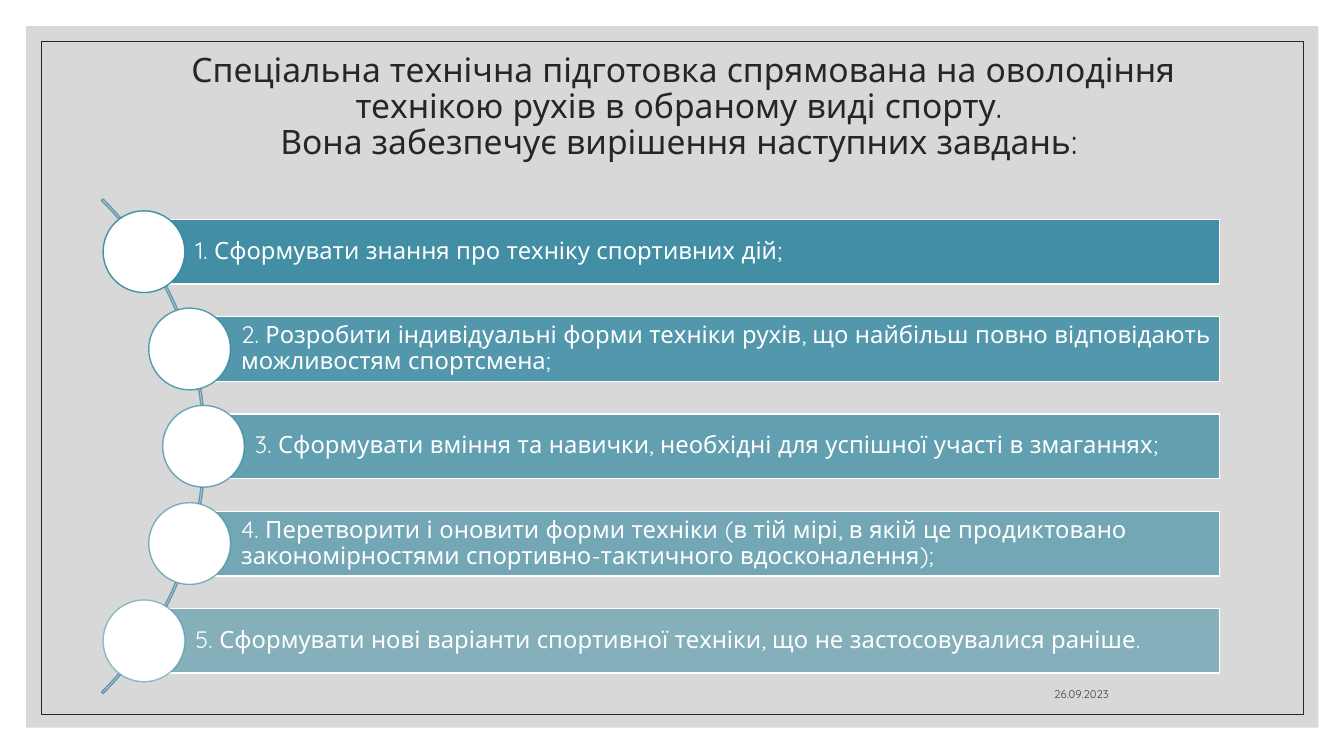
from dataclasses import dataclass
from math import sqrt

from lxml.etree import SubElement
from pptx import Presentation
from pptx.dml.color import RGBColor
from pptx.enum.shapes import MSO_SHAPE as Preset
from pptx.enum.text import MSO_ANCHOR as Anchor, PP_ALIGN as Align
from pptx.oxml.ns import qn
from pptx.util import Pt

COLORS = {
    "white": "FFFFFF",
    "panel": "BFBFBF",
    "ink": "262626",
    "date": "3F3F3F",
    "teal": "3187A0",
    "arc": "6499AC",
}
FONT = "Quicksand"

ARC_CENTER_X, ARC_CENTER_Y, ARC_RADIUS = -103, 318.8, 249.8
CIRCLE_PATH_RADIUS = 248.4
TASK_PITCH = 69.5
BAR_RIGHT, BAR_HEIGHT = 871.2, 46.2
CIRCLE_SIZE = 58.4


@dataclass(frozen=True)
class Box:
    left: float
    top: float
    width: float
    height: float

    def lengths(self) -> tuple:
        return tuple(Pt(value) for value in (self.left, self.top, self.width, self.height))


@dataclass(frozen=True)
class Paint:
    color: str
    opacity: int = 100


@dataclass(frozen=True)
class TextStyle:
    size: float
    color: str
    align: Align = Align.LEFT
    anchor: Anchor = Anchor.MIDDLE
    spacing: float = 0.9
    margins: tuple = (7.2, 3.6, 7.2, 3.6)


@dataclass(frozen=True)
class Task:
    text: str
    opacity: int


TASKS = [
    Task("1. Сформувати знання про техніку спортивних дій;", 90),
    Task("2. Розробити індивідуальні форми техніки рухів, що найбільш повно "
         "відповідають можливостям спортсмена;", 80),
    Task("3. Сформувати вміння та навички, необхідні для успішної участі в змаганнях;", 70),
    Task("4. Перетворити і оновити форми техніки (в тій мірі, в якій це продиктовано "
         "закономірностями спортивно-тактичного вдосконалення);", 60),
    Task("5. Сформувати нові варіанти спортивної техніки, що не застосовувалися раніше.", 50),
]
TITLE = ("Спеціальна технічна підготовка спрямована на оволодіння технікою рухів "
         "в обраному виді спорту. \vВона забезпечує вирішення наступних завдань: ")

TITLE_STYLE = TextStyle(24, "ink", Align.CENTER, Anchor.TOP, margins=(7.2, 2, 7.2, 3.6))
TASK_STYLE = TextStyle(17, "white", margins=(36.7, 3.6, 3.6, 3.6))
DATE_STYLE = TextStyle(8, "date", Align.RIGHT, Anchor.BOTTOM, spacing=1.0)


def apply_paint(fill, paint: Paint) -> None:
    fill.solid()
    fill.fore_color.rgb = RGBColor.from_string(COLORS[paint.color])


def add_opacity(shape, parent: str, paint: Paint) -> None:
    if paint.opacity < 100:
        color = shape.element.spPr.find(f"{parent}/{qn('a:solidFill')}/{qn('a:srgbClr')}")
        SubElement(color, qn("a:alpha")).set("val", str(paint.opacity * 1000))


def add_preset(slide, preset: Preset, box: Box, fill: Paint | None = None,
               line: Paint | None = None, line_width: float = 1):
    shape = slide.shapes.add_shape(preset, *box.lengths())
    shape.shadow.inherit = False
    if fill:
        apply_paint(shape.fill, fill)
        add_opacity(shape, ".", fill)
    else:
        shape.fill.background()
    if line:
        apply_paint(shape.line.fill, line)
        shape.line.width = Pt(line_width)
        add_opacity(shape, qn("a:ln"), line)
    else:
        shape.line.fill.background()
    return shape


def write_text(shape, text: str, style: TextStyle) -> None:
    frame = shape.text_frame
    left, top, right, bottom = (Pt(margin) for margin in style.margins)
    frame_format = {
        "word_wrap": True, "vertical_anchor": style.anchor,
        "margin_left": left, "margin_top": top,
        "margin_right": right, "margin_bottom": bottom,
    }
    for name, value in frame_format.items():
        setattr(frame, name, value)
    paragraph = frame.paragraphs[0]
    paragraph.text = text
    paragraph.alignment = style.align
    paragraph.line_spacing = style.spacing
    for run in paragraph.runs:
        for name, value in {"name": FONT, "size": Pt(style.size)}.items():
            setattr(run.font, name, value)
        run.font.color.rgb = RGBColor.from_string(COLORS[style.color])


def add_label(slide, box: Box, text: str, style: TextStyle) -> None:
    write_text(slide.shapes.add_textbox(*box.lengths()), text, style)


def add_arc(slide) -> None:
    """Draw the thin quarter arc that carries the circles."""
    size = 2 * ARC_RADIUS
    box = Box(ARC_CENTER_X - ARC_RADIUS, ARC_CENTER_Y - ARC_RADIUS, size, size)
    arc = add_preset(slide, Preset.BLOCK_ARC, box, line=Paint("arc"))
    for index, value in enumerate((189, 27, 0.0031)):
        arc.adjustments[index] = value


def add_task(slide, task: Task, offset: float) -> None:
    """Draw a bar and its circle, offset vertically from the arc centre."""
    center_x = ARC_CENTER_X + sqrt(CIRCLE_PATH_RADIUS ** 2 - offset ** 2)
    center_y = ARC_CENTER_Y + offset
    paint = Paint("teal", task.opacity)
    bar_box = Box(center_x, center_y - BAR_HEIGHT / 2, BAR_RIGHT - center_x, BAR_HEIGHT)
    bar = add_preset(slide, Preset.RECTANGLE, bar_box, paint, Paint("white"))
    write_text(bar, task.text, TASK_STYLE)
    radius = CIRCLE_SIZE / 2
    circle_box = Box(center_x - radius, center_y - radius, CIRCLE_SIZE, CIRCLE_SIZE)
    add_preset(slide, Preset.OVAL, circle_box, Paint("white"), paint)


def main() -> None:
    presentation = Presentation()
    presentation.slide_width, presentation.slide_height = Pt(960), Pt(540)
    slide = presentation.slides.add_slide(presentation.slide_layouts[6])

    add_preset(slide, Preset.RECTANGLE, Box(18.7, 18.7, 923, 501), Paint("panel", 60))
    add_preset(slide, Preset.RECTANGLE, Box(29.5, 29.5, 901.4, 481),
               line=Paint("ink"), line_width=0.75)
    add_label(slide, Box(108.7, 36, 758.9, 108), TITLE, TITLE_STYLE)
    add_arc(slide)
    middle = (len(TASKS) - 1) / 2
    for index, task in enumerate(TASKS):
        add_task(slide, task, (index - middle) * TASK_PITCH)
    add_label(slide, Box(571.7, 475.2, 227.5, 28.8), "26.09.2023", DATE_STYLE)

    presentation.save("out.pptx")


if __name__ == "__main__":
    main()
